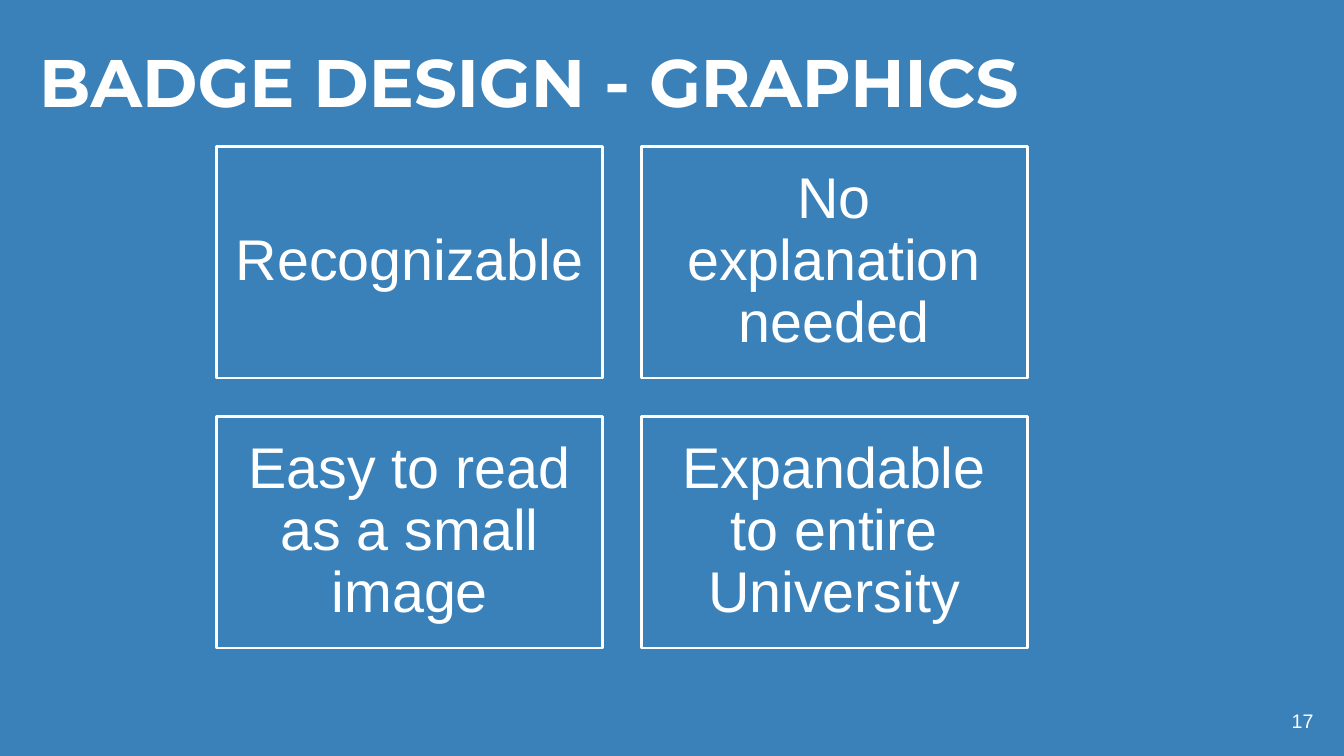
from pptx import Presentation
from pptx.dml.color import RGBColor
from pptx.enum.shapes import MSO_SHAPE
from pptx.enum.text import MSO_ANCHOR, PP_ALIGN
from pptx.util import Inches, Pt

BLUE, WHITE = "3A81BA", "FFFFFF"
CRITERIA = [
    "Recognizable",
    "No explanation needed",
    "Easy to read as a small image",
    "Expandable to entire University",
]


def rgb(value):
    return RGBColor.from_string(value)


def set_text(sp, text, size, font="Arial", bold=False, align=PP_ALIGN.CENTER,
             anchor=MSO_ANCHOR.TOP, inset=0.1):
    tf = sp.text_frame
    tf.word_wrap = True
    tf.vertical_anchor = anchor
    tf.margin_left = tf.margin_right = Inches(inset)
    tf.margin_top = tf.margin_bottom = Inches(inset)
    p = tf.paragraphs[0]
    p.text = text
    p.alignment = align
    p.font.name, p.font.size, p.font.bold = font, Pt(size), bold
    p.font.color.rgb = rgb(WHITE)
    return p


def add_title(s, x, y, w, h):
    sp = s.shapes.add_textbox(Inches(x), Inches(y), Inches(w), Inches(h))
    set_text(sp, "BADGE DESIGN - GRAPHICS", 48, "Montserrat", True, PP_ALIGN.LEFT)


def add_criteria_grid(s, x, y, w, h, gap=0.38, columns=2):
    rows = len(CRITERIA) // columns
    box_w = (w - gap * (columns - 1)) / columns
    box_h = (h - gap * (rows - 1)) / rows
    for i, text in enumerate(CRITERIA):
        row, col = divmod(i, columns)
        sp = s.shapes.add_shape(
            MSO_SHAPE.RECTANGLE,
            Inches(x + col * (box_w + gap)), Inches(y + row * (box_h + gap)),
            Inches(box_w), Inches(box_h))
        sp.shadow.inherit = False
        sp.fill.solid()
        sp.fill.fore_color.rgb = rgb(BLUE)
        sp.line.color.rgb = rgb(WHITE)
        sp.line.width = Pt(2)
        p = set_text(sp, text, 41, anchor=MSO_ANCHOR.MIDDLE, inset=0.17)
        p.line_spacing = 0.9


def add_page_number(s, x, y, w, h):
    sp = s.shapes.add_textbox(Inches(x), Inches(y), Inches(w), Inches(h))
    set_text(sp, "17", 14, inset=0.05)


def main():
    prs = Presentation()
    prs.slide_width, prs.slide_height = Inches(13.33), Inches(7.5)
    s = prs.slides.add_slide(prs.slide_layouts[6])

    # Background
    s.background.fill.solid()
    s.background.fill.fore_color.rgb = rgb(BLUE)

    # Content
    add_page_number(s, 12.63, 6.98, 0.58, 0.4)
    add_title(s, 0.29, 0.3, 11.56, 1.69)
    add_criteria_grid(s, 2.15, 1.45, 8.04, 4.98)

    prs.save("out.pptx")


if __name__ == "__main__":
    main()
